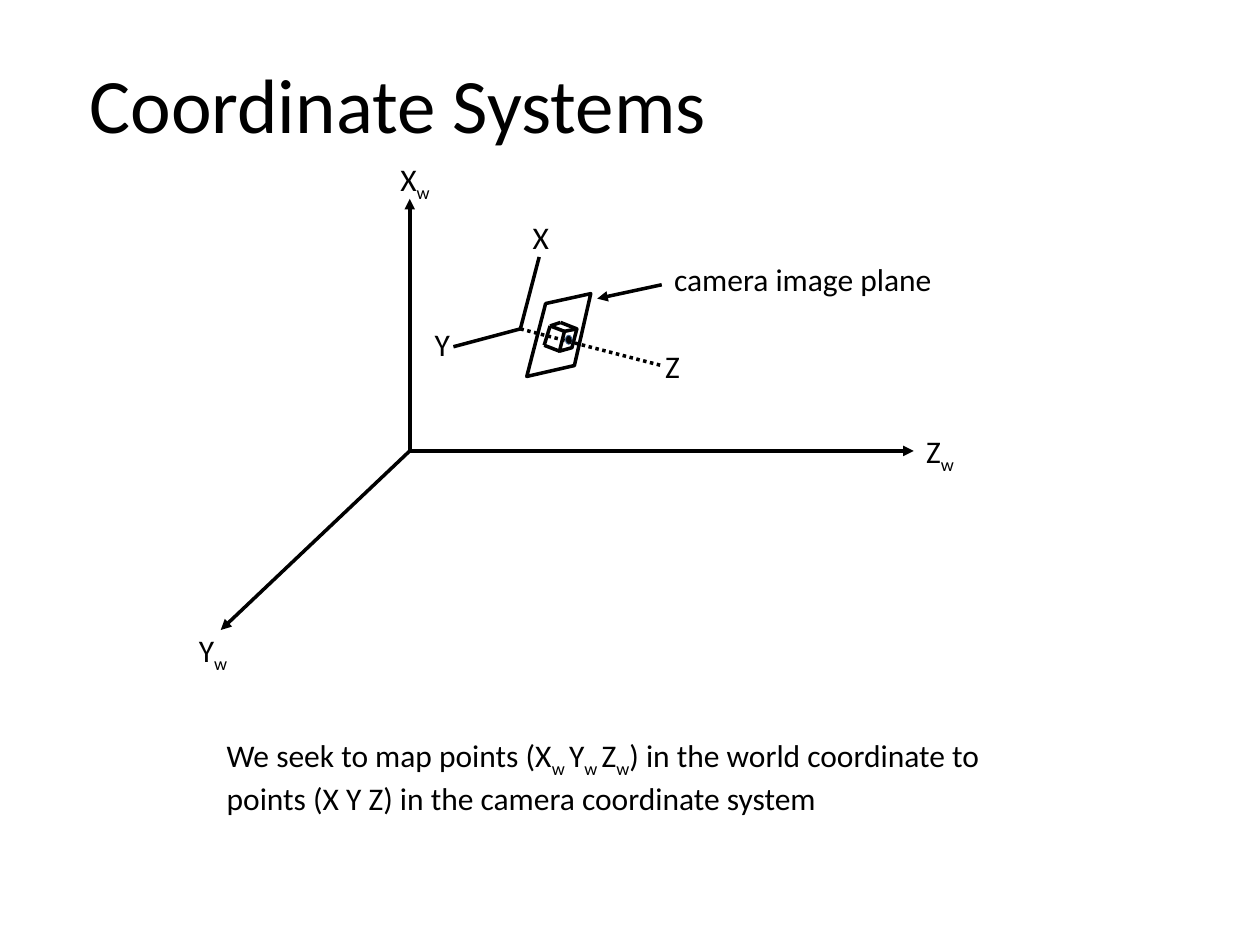
"""Build a slide relating world and camera coordinate systems."""
import pptx
import pptx.util
import pptx.dml.color
import pptx.enum.dml
import pptx.enum.shapes
import pptx.enum.text
import pptx.oxml
import pptx.oxml.ns
from pptx.util import Cm

BLACK = pptx.dml.color.RGBColor(0, 0, 0)
WHITE = pptx.dml.color.RGBColor(255, 255, 255)
BLUE = pptx.dml.color.RGBColor(0x3A, 0x5F, 0x8C)


class Diagram:
    font = "Calibri"
    size = 18
    weight = 2

    def __init__(self, s):
        self.s = s
        self.shapes = s.shapes

    def style_run(self, r, size):
        r.font.name = self.font
        r.font.size = pptx.util.Pt(size)
        r.font.color.rgb = BLACK

    def place(self, sp, x, y, w, h):
        sp.left, sp.top, sp.width, sp.height = Cm(x), Cm(y), Cm(w), Cm(h)

    def title(self, text, x, y, w, h):
        sp = self.s.shapes.title
        self.place(sp, x, y, w, h)
        tf = sp.text_frame
        tf.text = text
        tf.word_wrap = False
        tf.vertical_anchor = pptx.enum.text.MSO_ANCHOR.TOP
        p = tf.paragraphs[0]
        p.alignment = pptx.enum.text.PP_ALIGN.LEFT
        self.style_run(p.runs[0], 44)

    def text(self, parts, x, y, w, h=1.02, wrap=False):
        """Write parts as runs, every second one a subscript."""
        sp = self.shapes.add_textbox(Cm(x), Cm(y), Cm(w), Cm(h))
        tf = sp.text_frame
        tf.word_wrap = wrap
        for i, part in enumerate(parts):
            r = tf.paragraphs[0].add_run()
            r.text = part
            self.style_run(r, self.size)
            if i % 2:
                r.font._element.set("baseline", "-25000")

    def line(self, start, end, arrow=False, dotted=False):
        sp = self.shapes.add_connector(
            pptx.enum.shapes.MSO_CONNECTOR.STRAIGHT,
            Cm(start[0]), Cm(start[1]), Cm(end[0]), Cm(end[1]))
        sp.line.color.rgb = BLACK
        sp.line.width = pptx.util.Pt(self.weight)
        if dotted:
            sp.line.dash_style = pptx.enum.dml.MSO_LINE.ROUND_DOT
        if arrow:
            tail = pptx.oxml.parse_xml(
                f'<a:tailEnd {pptx.oxml.ns.nsdecls("a")} type="triangle"/>')
            sp.line._get_or_add_ln().append(tail)
        effects = pptx.oxml.parse_xml(f'<a:effectLst {pptx.oxml.ns.nsdecls("a")}/>')
        sp._element.spPr.append(effects)

    def finish(self, sp, fill, color, weight):
        sp.shadow.inherit = False
        sp.fill.solid()
        sp.fill.fore_color.rgb = fill
        sp.line.color.rgb = color
        sp.line.width = pptx.util.Pt(weight)

    def polygon(self, points):
        corners = [(Cm(x), Cm(y)) for x, y in points]
        fb = self.shapes.build_freeform(*corners[0])
        fb.add_line_segments(corners[1:], close=True)
        self.finish(fb.convert_to_shape(), WHITE, BLACK, self.weight)

    def dot(self, x, y, w, h):
        sp = self.shapes.add_shape(
            pptx.enum.shapes.MSO_SHAPE.OVAL, Cm(x), Cm(y), Cm(w), Cm(h))
        self.finish(sp, BLACK, BLUE, 0.5)

    def cube(self, face, back):
        """Group a front face with its edges to the back corners and a lens."""
        self.shapes = self.s.shapes.add_group_shape().shapes
        self.polygon(face)
        top_right, _, bottom_left, top_left = face
        back_right, back_left, back_bottom = back
        for start, end in ((back_right, back_left), (bottom_left, back_bottom),
                           (back_left, back_bottom), (top_left, back_left),
                           (top_right, back_right)):
            self.line(start, end)
        self.dot(11.4, 6.76, 0.13, 0.18)
        self.shapes = self.s.shapes


def main():
    prs = pptx.Presentation()
    prs.slide_width, prs.slide_height = Cm(25.4), Cm(19.05)
    d = Diagram(prs.slides.add_slide(prs.slide_layouts[5]))
    d.polygon([(11.91, 5.92), (11.58, 7.37), (10.62, 7.59), (11, 6.12)])
    d.title("Coordinate Systems", 1.55, 1.02, 13.08, 2.13)
    d.text(["We seek to map points (X", "w ", "Y", "w ", "Z", "w",
            ") in the world coordinate to points (X Y Z) in the camera coordinate system"],
           4.32, 14.71, 17.15, 1.8, wrap=True)

    world = (8.26, 9.09)
    for end in ((8.26, 4.01), (4.45, 12.7), (18.42, 9.09)):
        d.line(world, end, arrow=True)
    for name, x, y in (("X", 7.82, 3.1), ("Y", 3.76, 12.6), ("Z", 18.42, 8.59)):
        d.text([name, "w"], x, y, 1.13)

    d.cube([(11.63, 6.63), (11.53, 7.01), (11.28, 7.08), (11.38, 6.68)],
           [(11.3, 6.5), (11.09, 6.57), (10.97, 6.96)])

    camera = (10.49, 6.63)
    d.line(camera, (13.34, 7.37), dotted=True)
    for end in ((9.14, 6.99), (10.87, 5.18)):
        d.line(camera, end)
    for name, x, y in (("X", 10.49, 4.27), ("Y", 8.51, 6.43), ("Z", 13.16, 6.88)):
        d.text([name], x, y, 0.82)
    d.text(["camera image plane"], 13.34, 5.11, 5.77)
    d.line((13.34, 5.74), (12.04, 6.02), arrow=True)
    prs.save("out.pptx")


if __name__ == "__main__":
    main()
